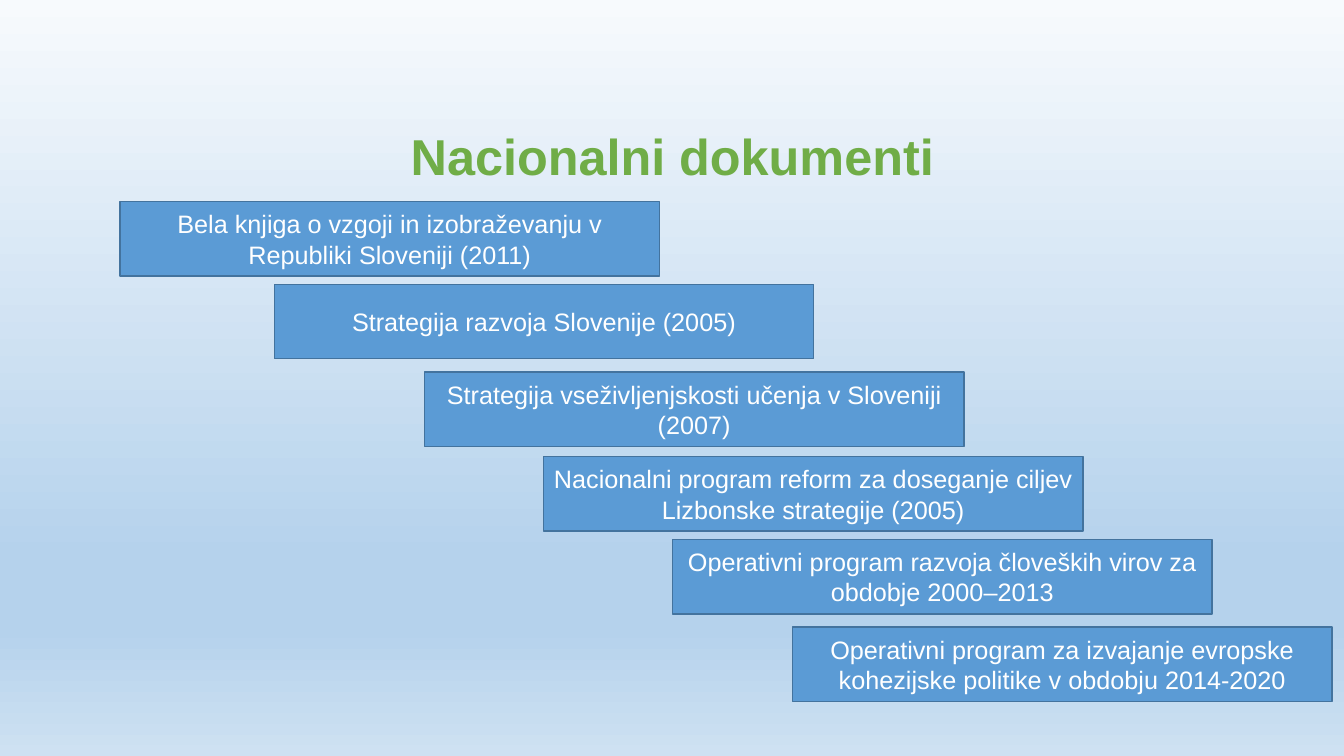
from lxml import etree
from pptx import Presentation
from pptx.dml.color import RGBColor
from pptx.enum import shapes, text
from pptx.oxml import ns
from pptx.util import Inches, Pt

TITLE = "Nacionalni dokumenti"
DOCUMENTS = [
    ("Bela knjiga o vzgoji in izobraževanju v Republiki Sloveniji (2011)", 1.19, 2),
    ("Strategija razvoja Slovenije (2005)", 2.72, 2.82),
    ("Strategija vseživljenjskosti učenja v Sloveniji (2007)", 4.21, 3.69),
    ("Nacionalni program reform za doseganje ciljev Lizbonske strategije (2005)", 5.39, 4.53),
    ("Operativni program razvoja človeških virov za obdobje 2000–2013", 6.67, 5.35),
    ("Operativni program za izvajanje evropske kohezijske politike v obdobju 2014-2020", 7.86, 6.22),
]
STEP_WIDTH, STEP_HEIGHT = 5.35, 0.74

FONT = "Arial"
GREEN = RGBColor(0x70, 0xAD, 0x47)
BLUE = RGBColor(0x5B, 0x9B, 0xD5)
DARK_BLUE = RGBColor(0x43, 0x73, 0x9E)
WHITE = RGBColor(0xFF, 0xFF, 0xFF)
SKY = [
    (0, RGBColor(0xF7, 0xFA, 0xFD)),
    (74, RGBColor(0xB5, 0xD2, 0xEC)),
    (83, RGBColor(0xB5, 0xD2, 0xEC)),
    (100, RGBColor(0xCE, 0xE1, 0xF2)),
]


def paint_background(page):
    fill = page.background.fill
    fill.gradient()
    fill.gradient_angle = 270
    stops = page.element.find(".//" + ns.qn("a:gsLst"))
    for stop in list(stops):
        stops.remove(stop)
    for percent, color in SKY:
        stop = etree.SubElement(stops, ns.qn("a:gs"), pos=str(percent * 1000))
        etree.SubElement(stop, ns.qn("a:srgbClr"), val=str(color))


def write(box, words, size, color, bold, anchor):
    frame = box.text_frame
    frame.word_wrap = True
    frame.auto_size = text.MSO_AUTO_SIZE.NONE
    frame.vertical_anchor = anchor
    para = frame.paragraphs[0]
    para.alignment = text.PP_ALIGN.CENTER
    span = para.add_run()
    span.text = words
    span.font.name = FONT
    span.font.size = Pt(size)
    span.font.bold = bold
    span.font.color.rgb = color
    return para


def add_title(page):
    title = page.shapes.title
    title.left, title.top = Inches(0.92), Inches(0.4)
    title.width, title.height = Inches(11.5), Inches(1.45)
    para = write(title, TITLE, 36, GREEN, True, text.MSO_ANCHOR.BOTTOM)
    para.line_spacing = 0.9
    title.text_frame.margin_bottom = 0


def add_step(page, words, left, top):
    step = page.shapes.add_shape(
        shapes.MSO_SHAPE.RECTANGLE,
        Inches(left), Inches(top), Inches(STEP_WIDTH), Inches(STEP_HEIGHT),
    )
    step.shadow.inherit = False
    step.fill.solid()
    step.fill.fore_color.rgb = BLUE
    step.line.color.rgb = DARK_BLUE
    step.line.width = Pt(1)
    write(step, words, 18, WHITE, False, text.MSO_ANCHOR.MIDDLE)


def main():
    deck = Presentation()
    deck.slide_width, deck.slide_height = Inches(13.33), Inches(7.5)
    page = deck.slides.add_slide(deck.slide_layouts[5])
    paint_background(page)
    add_title(page)
    for words, left, top in DOCUMENTS:
        add_step(page, words, left, top)
    deck.save("out.pptx")


if __name__ == "__main__":
    main()
